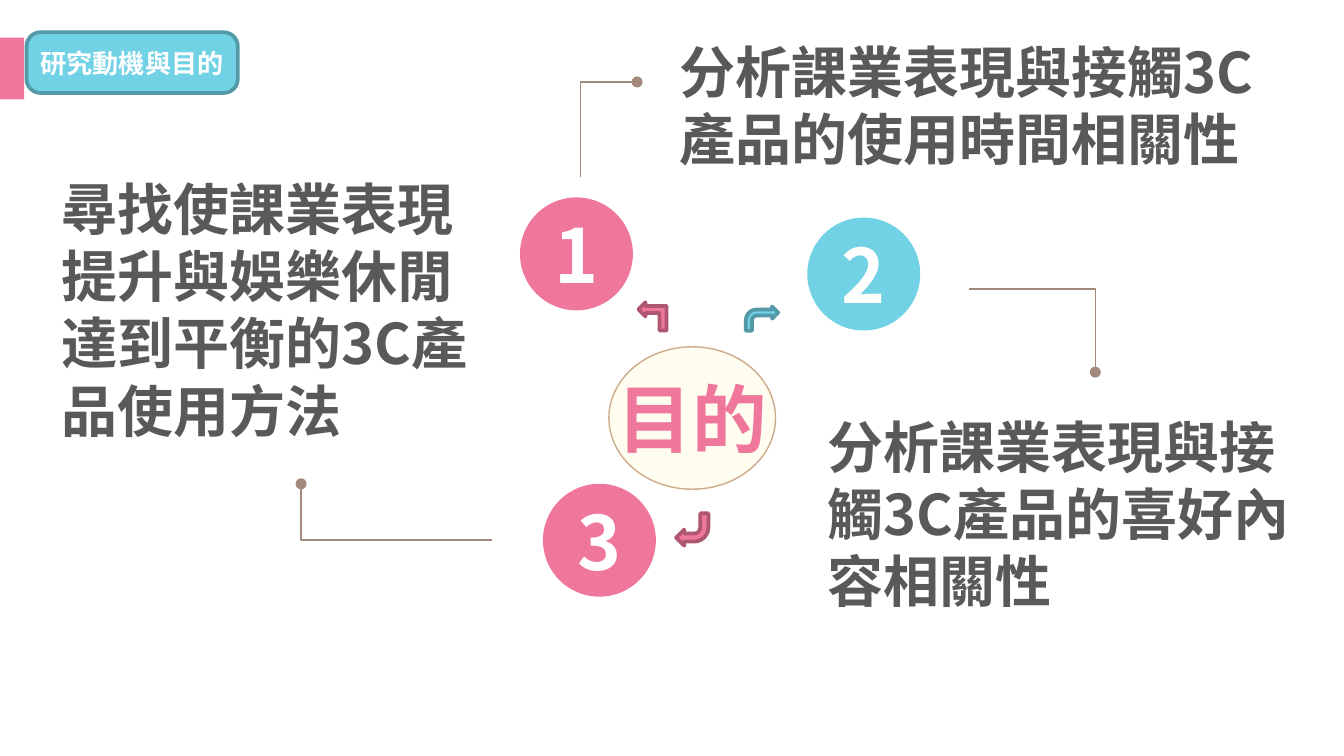
from lxml.etree import SubElement
from pptx import Presentation
from pptx.dml.color import RGBColor
from pptx.enum.shapes import MSO_SHAPE
from pptx.enum.text import MSO_ANCHOR, PP_ALIGN
from pptx.oxml.ns import qn
from pptx.util import Pt

THEME = {
    "font": "Noto Sans CJK SC",
    "pink": "F0779C", "pink_edge": "AF5671",
    "blue": "72D2E5", "blue_edge": "5399A7",
    "cream": "FFFDEF", "tan": "CBAB89", "lead": "A2897B",
    "ink": "595959", "white": "FFFFFF",
    "title": 14, "body": 30, "big": 40,
    "thin": 0.75, "thick": 2,
}

# Content: boxes are left, top, width, height in points
SLIDE_SIZE = (720, 405)
TAB = (0, 20.2, 13, 33.1)
BADGE = ("研究動機與目的", (14.2, 17.3, 113.2, 32.5))
HUB = ("目的", (326.2, 185.8, 89.3, 76.3))
CIRCLE = 60.5
STEPS = [  # number, left, top, colour
    ("1", 278.6, 105.8, "pink"),
    ("2", 432.5, 116.6, "blue"),
    ("3", 290.9, 259.2, "pink"),
]
GOALS = [  # text, box, inset at the sides, inset at top and bottom
    ("分析課業表現與接觸3C產品的使用時間相關性", (357.1, 16.6, 326.2, 79.9), 7.2, 3.6),
    ("分析課業表現與接觸3C產品的喜好內容相關性", (443.5, 221, 252, 108.7), 0, 0),
    ("尋找使課業表現提升與娛樂休閒達到平衡的3C產品使用方法",
     (25.9, 90, 236.9, 152.6), 7.2, 3.6),
]
LEADS = [  # corner points, dot at the last one
    [(311, 95), (311, 43.9), (341.3, 43.9)],
    [(519.1, 154.8), (586.8, 154.8), (586.8, 199.4)],
    [(263.5, 289.4), (161.3, 289.4), (161.3, 259.2)],
]
BENT = (0.25, 0.25, 0.25, 0.44)
ARROWS = [  # shape, box, rotation, adjustments, colour
    (MSO_SHAPE.BENT_UP_ARROW, (342, 162, 15.1, 15.1), 270, BENT[:3], "pink"),
    (MSO_SHAPE.BENT_ARROW, (399.6, 164.2, 17.3, 13), 0, BENT, "blue"),
    (MSO_SHAPE.BENT_ARROW, (362.2, 275, 17.3, 17.3), 180, BENT, "pink"),
]


def colour(name):
    return RGBColor.from_string(THEME[name])


def style_line(shape, edge, weight):
    if edge:
        shape.line.color.rgb = colour(edge)
        shape.line.width = Pt(THEME[weight])
    else:
        shape.line.fill.background()


def add_shape(kind, box, fill, edge=None, weight="thick", adjustments=()):
    shape = slide.shapes.add_shape(kind, *map(Pt, box))
    shape.shadow.inherit = False
    shape.fill.solid()
    shape.fill.fore_color.rgb = colour(fill)
    style_line(shape, edge, weight)
    for index, value in enumerate(adjustments):
        shape.adjustments[index] = value
    return shape


def write(shape, text, size, ink, align, anchor, wrap, side=0, end=0):
    frame = shape.text_frame
    frame_format = {
        "word_wrap": wrap, "vertical_anchor": anchor,
        "margin_left": Pt(side), "margin_right": Pt(side),
        "margin_top": Pt(end), "margin_bottom": Pt(end),
    }
    for key, value in frame_format.items():
        setattr(frame, key, value)
    paragraph = frame.paragraphs[0]
    paragraph.alignment = align
    run = paragraph.add_run()
    run.text = text
    font_format = {"name": THEME["font"], "size": Pt(THEME[size]), "bold": True}
    for key, value in font_format.items():
        setattr(run.font, key, value)
    run.font.color.rgb = colour(ink)
    # East Asian characters take their own typeface
    SubElement(run.font._element, qn("a:ea"), typeface=THEME["font"])


def write_label(shape, text, size, ink):
    write(shape, text, size, ink, PP_ALIGN.CENTER, MSO_ANCHOR.MIDDLE, False)


def add_lead(points):
    corners = [tuple(map(Pt, point)) for point in points]
    builder = slide.shapes.build_freeform(*corners[0])
    builder.add_line_segments(corners[1:], close=False)
    lead = builder.convert_to_shape()
    lead.shadow.inherit = False
    lead.fill.background()
    style_line(lead, "lead", "thin")
    SubElement(lead.line._get_or_add_ln(), qn("a:tailEnd"), type="oval")


presentation = Presentation()
presentation.slide_width, presentation.slide_height = map(Pt, SLIDE_SIZE)
slide = presentation.slides.add_slide(presentation.slide_layouts[6])

# Heading
add_shape(MSO_SHAPE.RECTANGLE, TAB, "pink")
heading, badge_box = BADGE
badge = add_shape(MSO_SHAPE.ROUNDED_RECTANGLE, badge_box, "blue", "blue_edge",
                  adjustments=(0.23,))
write_label(badge, heading, "title", "white")

# Hub and numbered circles
hub_text, hub_box = HUB
hub = add_shape(MSO_SHAPE.OVAL, hub_box, "cream", "tan", "thin")
write_label(hub, hub_text, "big", "pink")
for number, left, top, fill in STEPS:
    circle = add_shape(MSO_SHAPE.OVAL, (left, top, CIRCLE, CIRCLE), fill)
    write_label(circle, number, "big", "white")

# Arrows from the hub to the circles
for kind, box, rotation, adjustments, fill in ARROWS:
    arrow = add_shape(kind, box, fill, fill + "_edge", adjustments=adjustments)
    arrow.rotation = rotation

# Lead lines and goals
for points in LEADS:
    add_lead(points)
for text, box, side, end in GOALS:
    goal = slide.shapes.add_textbox(*map(Pt, box))
    write(goal, text, "body", "ink", PP_ALIGN.LEFT, MSO_ANCHOR.TOP, True, side, end)

presentation.save("out.pptx")
